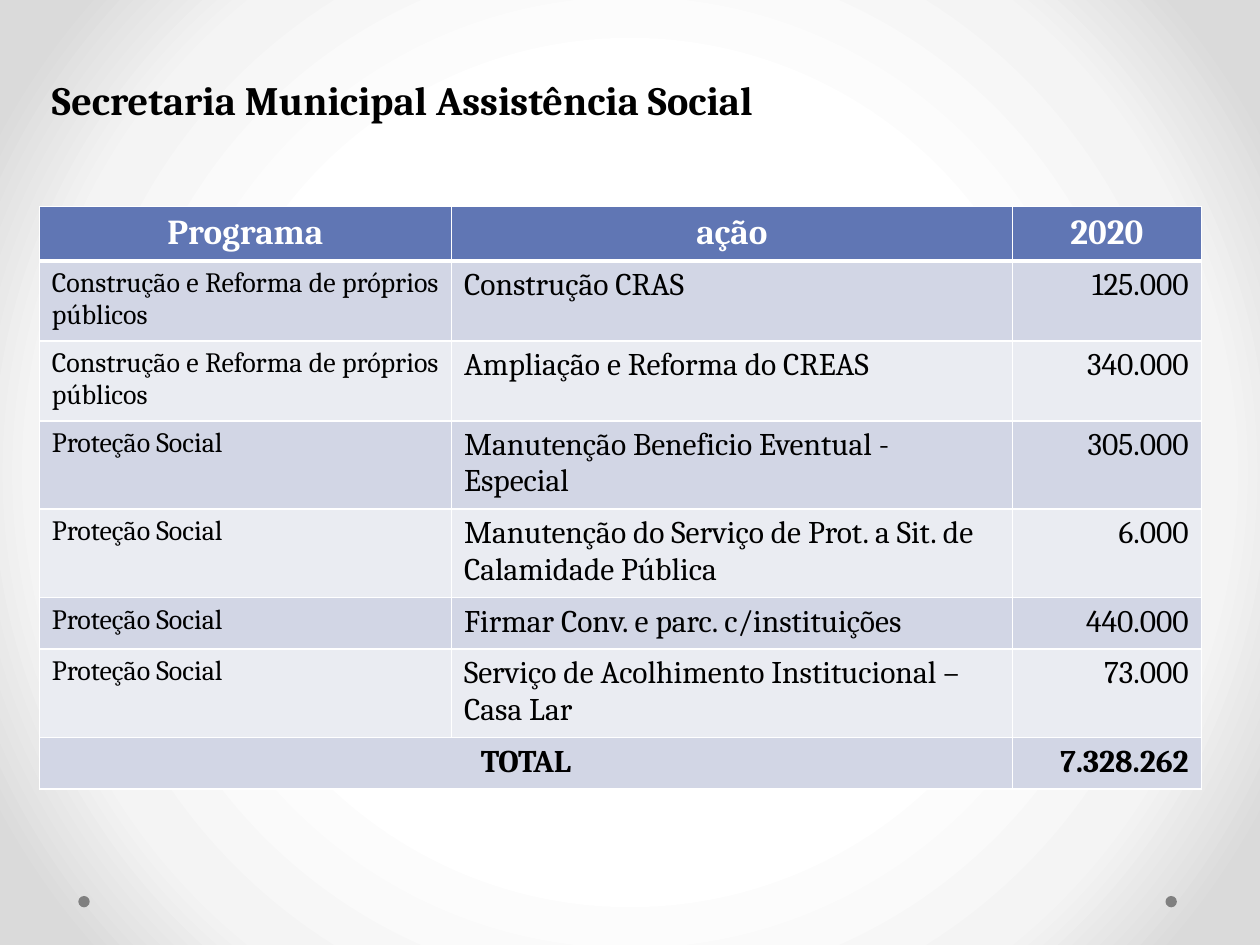
"""Build the budget slide of the social assistance office."""
from dataclasses import dataclass

from pptx import Presentation
from pptx.dml.color import RGBColor
from pptx.enum import shapes, text
from pptx.oxml import parse_xml
from pptx.oxml.ns import nsdecls
from pptx.util import Pt

AL = text.PP_ALIGN


@dataclass(frozen=True)
class Theme:
    font: str = "Cambria"
    ink: str = "000000"
    white: str = "FFFFFF"
    head: str = "6076B4"
    odd: str = "D2D6E5"
    even: str = "EAECF2"
    dot: str = "808080"
    glow: tuple = ((50, "FFFFFF"), (76, "F4F4F4"), (92, "DADADA"))
    title: float = 23
    label: float = 20
    body: float = 18
    small: float = 16


@dataclass(frozen=True)
class Style:
    size: float
    color: str
    align: AL
    bold: bool = False


@dataclass(frozen=True)
class Row:
    cells: tuple
    high: float


T = Theme()
BUILD = "Construção e Reforma de próprios públicos"
CARE = "Proteção Social"
WIDE = (235.5, 320.5, 108)
ROWS = (
    Row(("Programa", "ação", "2020"), 31),
    Row((BUILD, "Construção CRAS", "125.000"), 45.5),
    Row((BUILD, "Ampliação e Reforma do CREAS", "340.000"), 45.5),
    Row((CARE, "Manutenção Beneficio Eventual - Especial", "305.000"), 50.5),
    Row((CARE, "Manutenção do Serviço de Prot. a Sit. de Calamidade Pública", "6.000"), 50.5),
    Row((CARE, "Firmar Conv. e parc. c/instituições", "440.000"), 29.5),
    Row((CARE, "Serviço de Acolhimento Institucional – Casa Lar", "73.000"), 50.5),
    Row(("TOTAL", "", "7.328.262"), 29.5),
)
HEAD = (Style(T.label, T.white, AL.CENTER, True),) * 3
BODY = (
    Style(T.small, T.ink, AL.JUSTIFY),
    Style(T.body, T.ink, AL.LEFT),
    Style(T.body, T.ink, AL.RIGHT),
)
TOTAL = (
    Style(T.body, T.ink, AL.CENTER, True),
    Style(T.body, T.ink, AL.LEFT, True),
    Style(T.body, T.ink, AL.RIGHT, True),
)


def write(frame, words: str, style: Style) -> None:
    """Add one styled run to the first paragraph."""
    para = frame.paragraphs[0]
    para.alignment = style.align
    run = para.add_run()
    run.text = words
    font = run.font
    font.name, font.size, font.bold = T.font, Pt(style.size), style.bold
    font.color.rgb = RGBColor.from_string(style.color)


def paint(fill, color: str) -> None:
    """Give a solid fill."""
    fill.solid()
    fill.fore_color.rgb = RGBColor.from_string(color)


def edge(cell, base: float) -> None:
    """Draw white cell borders with the given bottom width."""
    props = cell._tc.get_or_add_tcPr()
    for spot, (side, width) in enumerate(zip("LRTB", (1, 1, 1, base))):
        props.insert(spot, parse_xml(
            f'<a:ln{side} {nsdecls("a")} w="{Pt(width)}"><a:solidFill>'
            f'<a:srgbClr val="{T.white}"/></a:solidFill></a:ln{side}>'))


def glow(slide) -> None:
    """Set the round gradient background."""
    stops = "".join(f'<a:gs pos="{pos * 1000}"><a:srgbClr val="{color}"/></a:gs>'
                    for pos, color in T.glow)
    slide.element.cSld.insert(0, parse_xml(
        f'<p:bg {nsdecls("p", "a")}><p:bgPr><a:gradFill rotWithShape="1">'
        f'<a:gsLst>{stops}</a:gsLst><a:path path="circle">'
        '<a:fillToRect l="50000" t="50000" r="50000" b="50000"/></a:path>'
        '</a:gradFill><a:effectLst/></p:bgPr></p:bg>'))


def dot(slide, left: float) -> None:
    """Draw a small grey footer dot."""
    mark = slide.shapes.add_shape(
        shapes.MSO_SHAPE.OVAL, Pt(left), Pt(512), Pt(6.5), Pt(6.5))
    mark.shadow.inherit = False
    paint(mark.fill, T.dot)
    mark.line.fill.background()


def title(slide) -> None:
    """Place and fill the title."""
    box = slide.shapes.title
    box.left, box.top, box.width, box.height = Pt(22.5), Pt(39.5), Pt(607.5), Pt(35)
    frame = box.text_frame
    frame.word_wrap = True
    frame.auto_size = text.MSO_AUTO_SIZE.SHAPE_TO_FIT_TEXT
    frame.vertical_anchor = text.MSO_ANCHOR.TOP
    write(frame, "Secretaria Municipal Assistência Social",
          Style(T.title, T.ink, AL.LEFT, True))


def budget(slide) -> None:
    """Draw the budget table."""
    last = len(ROWS) - 1
    grid = slide.shapes.add_table(
        len(ROWS), len(WIDE), Pt(22.5), Pt(118), Pt(sum(WIDE)),
        Pt(sum(row.high for row in ROWS))).table
    for col, wide in zip(grid.columns, WIDE):
        col.width = Pt(wide)
    for y, row in enumerate(ROWS):
        grid.rows[y].height = Pt(row.high)
        styles = HEAD if y == 0 else TOTAL if y == last else BODY
        color = T.head if y == 0 else T.odd if y % 2 else T.even
        for x, (words, style) in enumerate(zip(row.cells, styles)):
            cell = grid.cell(y, x)
            paint(cell.fill, color)
            edge(cell, 1 if y else 3)
            if words:
                write(cell.text_frame, words, style)
    grid.cell(last, 0).merge(grid.cell(last, 1))


def main() -> None:
    """Build and save the slide."""
    deck = Presentation()
    deck.slide_width, deck.slide_height = Pt(720), Pt(540)
    slide = deck.slides.add_slide(deck.slide_layouts[5])
    glow(slide)
    for left in (666, 44.75):
        dot(slide, left)
    title(slide)
    budget(slide)
    deck.save("out.pptx")


if __name__ == "__main__":
    main()
